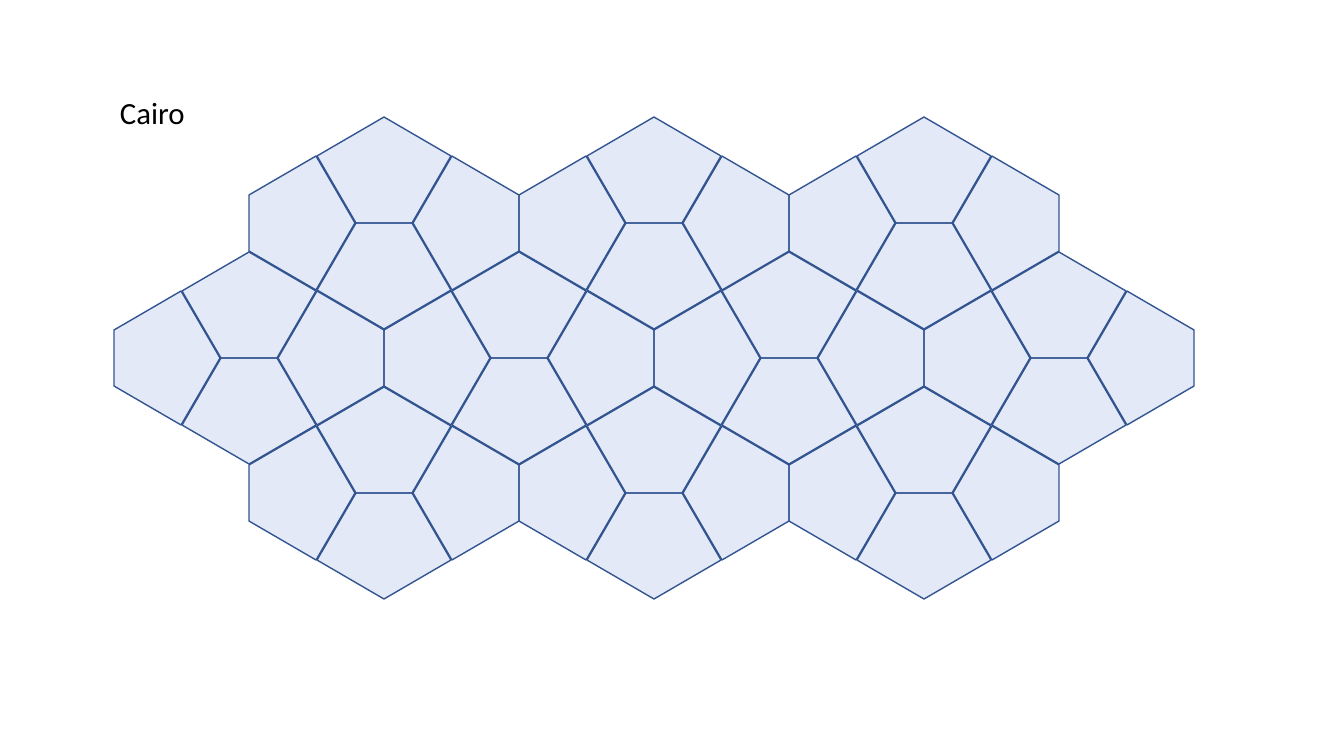
from lxml import etree
from pptx import Presentation
from pptx.dml.color import RGBColor
from pptx.enum.text import MSO_AUTO_SIZE
from pptx.oxml.ns import qn
from pptx.util import Pt

EMU_PER_PX = 914400 / 100.8
SLIDE_SIZE = (1344, 756)

FILL, OUTLINE, BLACK = "4472C4", "325491", "000000"
FILL_ALPHA = "15000"

# Corners around the middle of an upright pentagon
PENTAGON = [(0, -53), (67, -14), (28, 53), (-28, 53), (-67, -14)]
# Middle of each pentagon around the middle of its hexagon, and its rotation
HEXAGON = [(0, -53, 0), (0, 53, 180), (82, 0, 270), (-82, 0, 90)]

HALF_STEP = 135
# Hexagons in each row, from top to bottom
ROWS = [3, 4, 3]


def px(length):
    return round(length * EMU_PER_PX)


def color(hex_string):
    return RGBColor.from_string(hex_string)


def add_text(slide, text, left, top, width, height, *, size, font, text_color):
    box = slide.shapes.add_textbox(px(left), px(top), px(width), px(height))
    frame = box.text_frame
    frame.word_wrap = False
    frame.auto_size = MSO_AUTO_SIZE.SHAPE_TO_FIT_TEXT
    run = frame.paragraphs[0].add_run()
    run.text = text
    run.font.size = Pt(size)
    run.font.name = font
    run.font.color.rgb = color(text_color)


def add_pentagon(shapes, center_x, center_y, rotation):
    builder = shapes.build_freeform(*PENTAGON[0], scale=EMU_PER_PX)
    builder.add_line_segments(PENTAGON[1:], close=True)
    shape = builder.convert_to_shape(px(center_x), px(center_y))
    shape.rotation = rotation
    shape.shadow.inherit = False
    shape.fill.solid()
    shape.fill.fore_color.rgb = color(FILL)
    fill_color = shape.fill._xPr.find(qn("a:solidFill"))[0]
    etree.SubElement(fill_color, qn("a:alpha"), val=FILL_ALPHA)
    shape.line.color.rgb = color(OUTLINE)
    shape.line.width = Pt(1)


def add_hexagon(slide, center_x, center_y):
    """Group four pentagons that meet along a short middle edge."""
    group = slide.shapes.add_group_shape()
    for offset_x, offset_y, rotation in HEXAGON:
        add_pentagon(group.shapes, center_x + offset_x, center_y + offset_y, rotation)


def add_tiling(slide, center_x, center_y):
    """Stack centred rows of hexagons, each shifted by half a step."""
    for row, count in enumerate(ROWS):
        row_y = center_y + (row - 1) * HALF_STEP
        for column in range(count):
            add_hexagon(slide, center_x + (2 * column - count + 1) * HALF_STEP, row_y)


def main():
    presentation = Presentation()
    presentation.slide_width, presentation.slide_height = map(px, SLIDE_SIZE)
    slide = presentation.slides.add_slide(presentation.slide_layouts[6])
    add_tiling(slide, 654, 358)
    add_text(slide, "Cairo", 110, 89, 86, 47, size=22, font="Calibri", text_color=BLACK)
    presentation.save("out.pptx")


if __name__ == "__main__":
    main()
